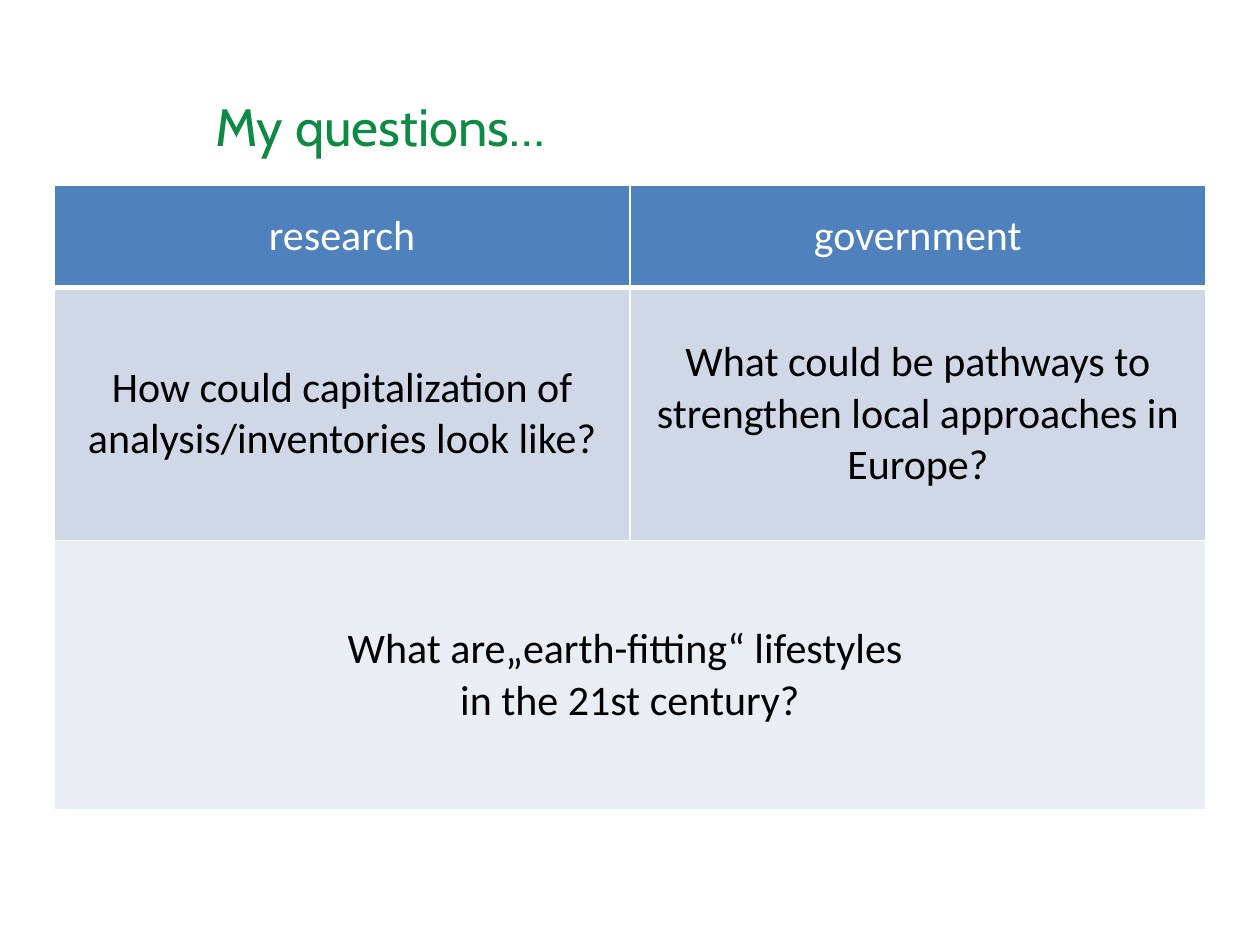
from pptx import Presentation
from pptx.dml.color import RGBColor
from pptx.enum.text import MSO_ANCHOR, PP_ALIGN
from pptx.oxml import parse_xml
from pptx.oxml.ns import nsdecls
from pptx.util import Inches, Pt

# Content
TITLE = "My questions…"
ROWS = [
    ["research", "government"],
    ["How could capitalization of analysis/inventories look like?",
     "What could be pathways to strengthen local approaches in Europe?"],
    ["What are„earth-fitting“ lifestyles \vin the 21st century?"],
]

# Look
THEME = {
    "title": {"font": "Cabin", "size": 30, "color": "0F8A44"},
    "header": {"font": "Calibri", "size": 24, "color": "FFFFFF"},
    "body": {"font": "Calibri", "size": 24, "color": "000000"},
    "row_fills": ["4F81BD", "D0D8E8", "E9EDF4"],
    "border": "FFFFFF",
}
TITLE_BOX = (1.61, 0.65, 7.49, 0.69)
TABLE_LEFT, TABLE_TOP, TABLE_WIDTH = 0.43, 1.47, 9.14
ROW_HEIGHTS = [0.81, 2.01, 2.14]
COLUMN_COUNT = 2


def write_text(frame, text, font, size, color, align):
    frame.text = text
    frame.word_wrap = True
    for para in frame.paragraphs:
        para.alignment = align
        for span in para.runs:
            span.font.name = font
            span.font.size = Pt(size)
            span.font.bold = False
            span.font.color.rgb = RGBColor.from_string(color)


def set_borders(cell, widths):
    properties = cell._tc.get_or_add_tcPr()
    for index, side in enumerate("LRTB"):
        properties.insert(index, parse_xml(
            f'<a:ln{side} {nsdecls("a")} w="{Pt(widths[side])}"><a:solidFill>'
            f'<a:srgbClr val="{THEME["border"]}"/></a:solidFill></a:ln{side}>'))


def add_title(page):
    title = page.shapes.title
    title.left, title.top, title.width, title.height = map(Inches, TITLE_BOX)
    write_text(title.text_frame, TITLE, align=PP_ALIGN.LEFT, **THEME["title"])
    title.text_frame.vertical_anchor = MSO_ANCHOR.MIDDLE


def add_questions(page):
    table = page.shapes.add_table(
        len(ROWS), COLUMN_COUNT, Inches(TABLE_LEFT), Inches(TABLE_TOP),
        Inches(TABLE_WIDTH), Inches(sum(ROW_HEIGHTS))).table
    for column in table.columns:
        column.width = Inches(TABLE_WIDTH / COLUMN_COUNT)

    for r, texts in enumerate(ROWS):
        table.rows[r].height = Inches(ROW_HEIGHTS[r])
        # The rule under the header is heavier than the others
        widths = {"L": 1, "R": 1, "T": 3 if r == 1 else 1, "B": 3 if r == 0 else 1}
        for c in range(COLUMN_COUNT):
            cell = table.cell(r, c)
            set_borders(cell, widths)
            cell.fill.solid()
            cell.fill.fore_color.rgb = RGBColor.from_string(THEME["row_fills"][r])
            cell.vertical_anchor = MSO_ANCHOR.MIDDLE
        # A row with a single text spans the whole table
        if len(texts) < COLUMN_COUNT:
            table.cell(r, 0).merge(table.cell(r, COLUMN_COUNT - 1))
        for c, text in enumerate(texts):
            write_text(table.cell(r, c).text_frame, text, align=PP_ALIGN.CENTER,
                       **THEME["header" if r == 0 else "body"])


def main():
    deck = Presentation()
    deck.slide_width, deck.slide_height = Inches(10), Inches(7.5)
    page = deck.slides.add_slide(deck.slide_layouts[5])
    add_title(page)
    add_questions(page)
    deck.save("out.pptx")


if __name__ == "__main__":
    main()
